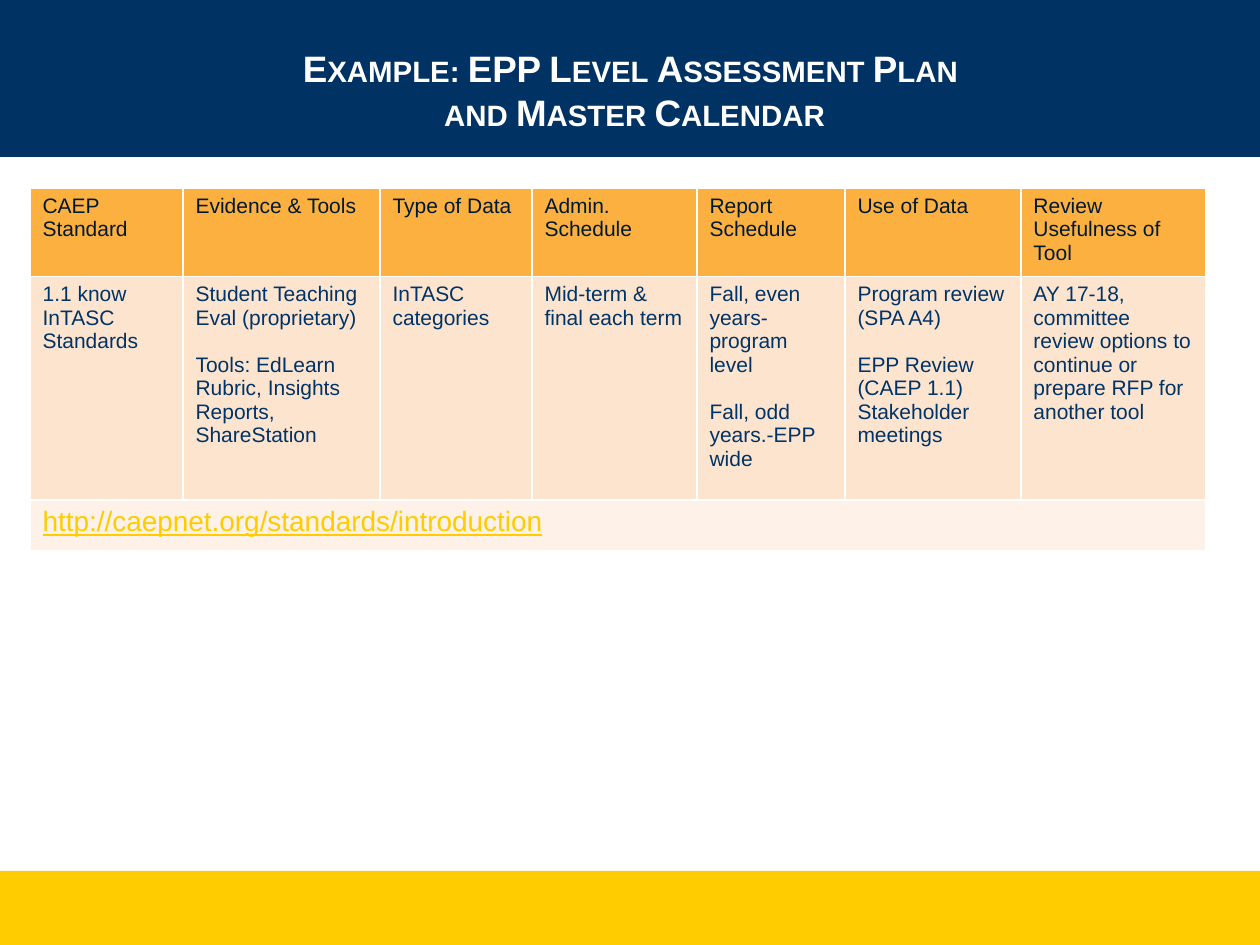
from lxml import etree
from pptx import Presentation, util as u
from pptx.dml.color import RGBColor
from pptx.enum import shapes, text
from pptx.oxml.ns import qn

PX = 914400 // 126
NAVY = RGBColor(0x00, 0x32, 0x64)
GOLD = RGBColor(0xFF, 0xCC, 0x00)
WHITE = RGBColor(0xFF, 0xFF, 0xFF)
ORANGE = RGBColor(0xFB, 0xB0, 0x40)
PEACH = RGBColor(0xFD, 0xE4, 0xCF)
CREAM = RGBColor(0xFE, 0xF2, 0xE8)
INK = RGBColor(0x00, 0x19, 0x33)
BLUE = RGBColor(0x00, 0x33, 0x66)


def style_font(para, size, color):
    for span in para.runs:
        span.font.name = "Arial"
        span.font.size = u.Pt(size)
        span.font.color.rgb = color


def style_cell(cell, color):
    """Fill the cell and draw a thin white line on each side."""
    props = cell._tc.get_or_add_tcPr()
    for side in ("a:lnL", "a:lnR", "a:lnT", "a:lnB"):
        line = etree.SubElement(props, qn(side), w=str(u.Pt(1)))
        solid = etree.SubElement(line, qn("a:solidFill"))
        etree.SubElement(solid, qn("a:srgbClr"), val=str(WHITE))
    cell.fill.solid()
    cell.fill.fore_color.rgb = color


deck = Presentation()
deck.slide_width = u.Inches(10)
deck.slide_height = u.Inches(7.5)
page = deck.slides.add_slide(deck.slide_layouts[6])

# Header and footer bands
for top, height, color in ((0, 157, NAVY), (871, 74, GOLD)):
    band = page.shapes.add_shape(
        shapes.MSO_SHAPE.RECTANGLE, 0, top * PX, deck.slide_width, height * PX)
    band.shadow.inherit = False
    band.fill.solid()
    band.fill.fore_color.rgb = color
    band.line.fill.background()

# Title
title = page.shapes.add_textbox(62 * PX, 22 * PX, 1145 * PX, 136 * PX)
frame = title.text_frame
frame.word_wrap = True
frame.vertical_anchor = text.MSO_ANCHOR.MIDDLE
frame.text = "Example: EPP Level Assessment Plan \vand Master Calendar"
para = frame.paragraphs[0]
para.alignment = text.PP_ALIGN.CENTER
style_font(para, 21, WHITE)
for span in para.runs:
    span.font.bold = True
    span.font._element.set("cap", "small")

# Assessment plan table: each column has a heading and its blocks of text
columns = [
    (153, "CAEP Standard", ["1.1 know InTASC Standards"]),
    (197, "Evidence & Tools", [
        "Student Teaching Eval (proprietary)",
        "Tools: EdLearn Rubric, Insights Reports, ShareStation"]),
    (152, "Type of Data", ["InTASC categories"]),
    (165, "Admin. Schedule", ["Mid-term & final each term"]),
    (148, "Report Schedule", [
        "Fall, even years-program level", "Fall, odd years.-EPP wide"]),
    (176, "Use of Data", [
        "Program review (SPA A4)",
        "EPP Review (CAEP 1.1)\nStakeholder meetings"]),
    (185, "Review Usefulness of Tool", [
        "AY 17-18, committee review options to continue or prepare RFP "
        "for another tool"]),
]
row_heights = (82, 224, 51)
table = page.shapes.add_table(
    len(row_heights), len(columns), 30 * PX, 188 * PX,
    sum(column[0] for column in columns) * PX, sum(row_heights) * PX).table
table.first_row = False
table.horz_banding = False
for row, height in zip(table.rows, row_heights):
    row.height = height * PX

for index, (width, heading, blocks) in enumerate(columns):
    table.columns[index].width = width * PX
    head, body, foot = (table.cell(row, index) for row in range(3))
    for cell, color in ((head, ORANGE), (body, PEACH), (foot, CREAM)):
        style_cell(cell, color)
    head.text_frame.text = heading
    style_font(head.text_frame.paragraphs[0], 12, INK)
    body.text_frame.text = "\n".join(blocks)
    for para in body.text_frame.paragraphs:
        style_font(para, 12, BLUE)
        if para.text == blocks[-1].split("\n")[0] and len(blocks) > 1:
            para.space_before = u.Pt(13.4)

# Source address across the last row
source = table.cell(2, 0)
source.merge(table.cell(2, len(columns) - 1))
source.text_frame.text = "http://caepnet.org/standards/introduction"
para = source.text_frame.paragraphs[0]
style_font(para, 16, GOLD)
para.runs[0].font.underline = True

deck.save("out.pptx")
